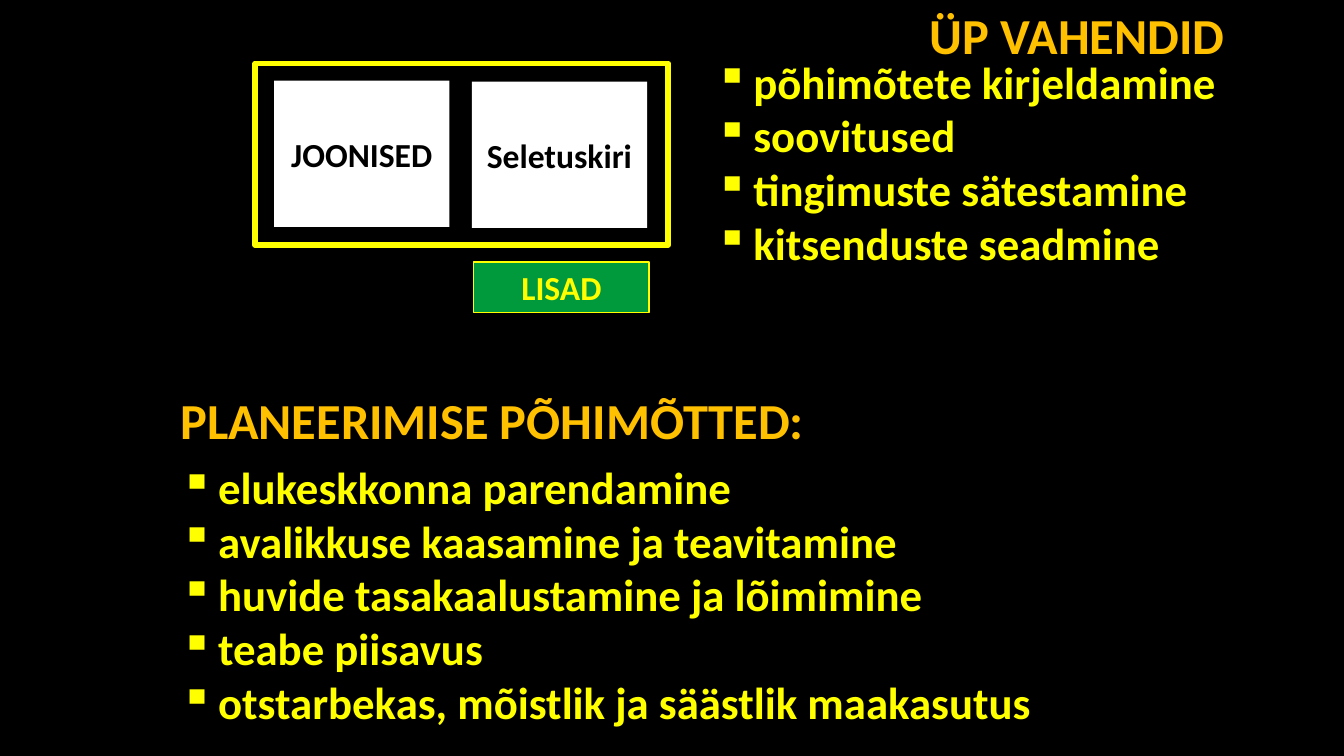
from lxml.etree import SubElement
from pptx import Presentation
from pptx.dml.color import RGBColor
from pptx.enum.shapes import MSO_SHAPE
from pptx.enum.text import MSO_ANCHOR, MSO_AUTO_SIZE, PP_ALIGN
from pptx.oxml.ns import qn
from pptx.util import Pt

BLACK = RGBColor(0, 0, 0)
WHITE = RGBColor(255, 255, 255)
YELLOW = RGBColor(255, 255, 0)
AMBER = RGBColor(255, 192, 0)
GREEN = RGBColor(0, 154, 61)

# Content, with places as left, top, width, height in points
TITLE = ("ÜP VAHENDID", (204.5, -0.7, 677.5, 51))
HEADING = ("PLANEERIMISE PÕHIMÕTTED:", (121.7, 274.3, 838, 51))
BULLET_LISTS = [
    (["põhimõtete kirjeldamine", "soovitused", "tingimuste sätestamine",
      "kitsenduste seadmine"], (504, 35.3, 455, 162.7)),
    (["elukeskkonna parendamine", "avalikkuse kaasamine ja teavitamine",
      "huvide tasakaalustamine ja lõimimine", "teabe piisavus",
      "otstarbekas, mõistlik ja säästlik maakasutus"],
     (121.7, 324.7, 699, 200.9)),
]
CARDS = [  # text, place, fill, line, font colour
    ("JOONISED", (195.8, 57.6, 125.3, 104.4), WHITE, None, BLACK),
    ("Seletuskiri", (337, 58.3, 125.3, 104.4), WHITE, None, BLACK),
    ("LISAD", (338.4, 187.2, 125.3, 36), GREEN, YELLOW, YELLOW),
]
FRAME = (182.2, 45.4, 295.2, 129.6)
BULLET_INDENT = 27


def write(frame, lines, size, color, align=PP_ALIGN.LEFT,
          anchor=MSO_ANCHOR.TOP, bullet=None):
    frame.word_wrap = True
    frame.auto_size = MSO_AUTO_SIZE.NONE
    frame.vertical_anchor = anchor
    for index, line in enumerate(lines):
        para = frame.add_paragraph() if index else frame.paragraphs[0]
        para.alignment = align
        para.line_spacing = 1.0
        para.space_before = Pt(0)
        if bullet:
            properties = para._p.get_or_add_pPr()
            properties.set("marL", str(Pt(BULLET_INDENT)))
            properties.set("indent", str(-Pt(BULLET_INDENT)))
            SubElement(properties, qn("a:buChar")).set("char", bullet)
        span = para.add_run()
        span.text = line
        span.font.name = "Calibri"
        span.font.size = Pt(size)
        span.font.bold = True
        span.font.color.rgb = color


def add_rectangle(page, place, fill=None, line=None, line_width=1):
    box = page.shapes.add_shape(MSO_SHAPE.RECTANGLE, *map(Pt, place))
    box.shadow.inherit = False
    if fill is None:
        box.fill.background()
    else:
        box.fill.solid()
        box.fill.fore_color.rgb = fill
    if line is None:
        box.line.fill.background()
    else:
        box.line.color.rgb = line
        box.line.width = Pt(line_width)
    return box


deck = Presentation()
deck.slide_width, deck.slide_height = Pt(960), Pt(540)
page = deck.slides.add_slide(deck.slide_layouts[5])
page.background.fill.solid()
page.background.fill.fore_color.rgb = BLACK

# Title
title = page.shapes.title
text, place = TITLE
title.left, title.top, title.width, title.height = map(Pt, place)
write(title.text_frame, [text], 36, AMBER, align=PP_ALIGN.RIGHT)

# Bullet lists
for lines, place in BULLET_LISTS:
    box = page.shapes.add_textbox(*map(Pt, place))
    write(box.text_frame, lines, 32, YELLOW, bullet="▪")

# Second heading
text, place = HEADING
box = page.shapes.add_textbox(*map(Pt, place))
write(box.text_frame, [text], 36, AMBER)

# Document cards and the frame around the first two
for text, place, fill, line, color in CARDS:
    card = add_rectangle(page, place, fill, line)
    write(card.text_frame, [text], 24, color, align=PP_ALIGN.CENTER,
          anchor=MSO_ANCHOR.MIDDLE)
add_rectangle(page, FRAME, line=YELLOW, line_width=4)

deck.save("out.pptx")
